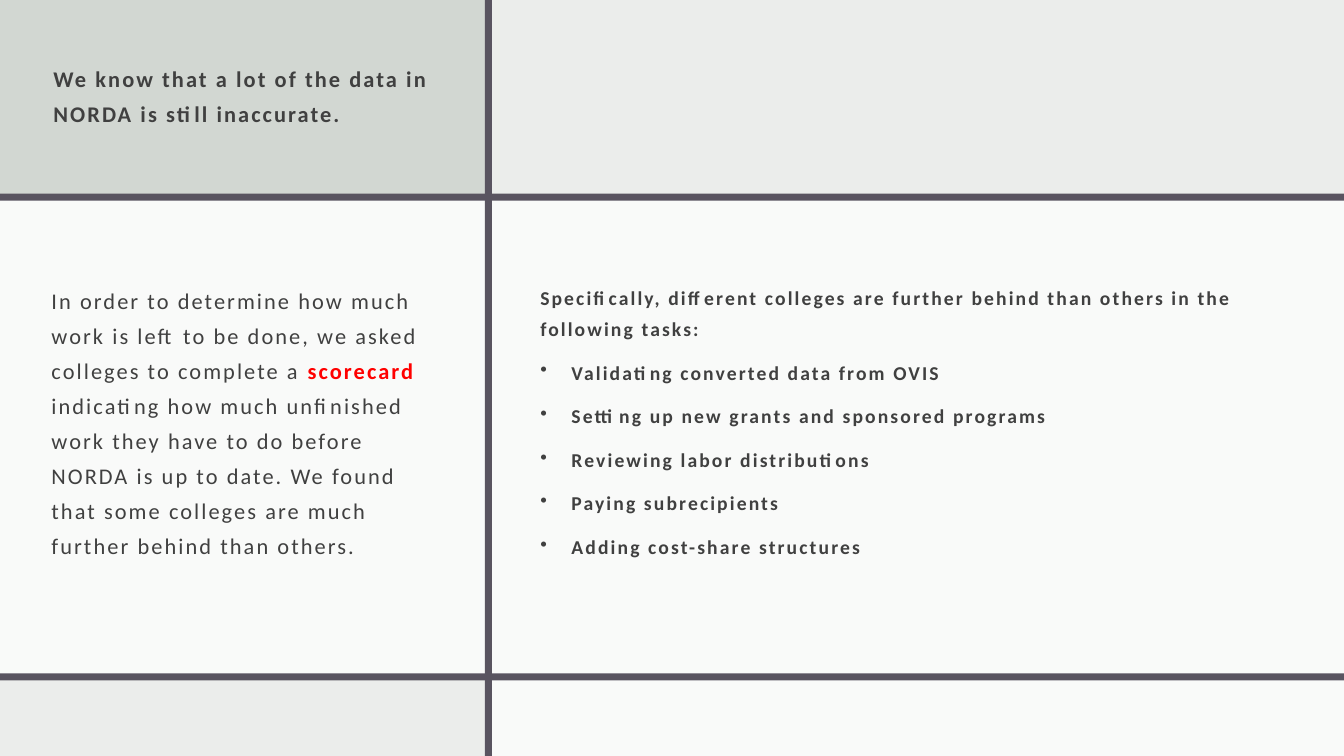
from dataclasses import dataclass

import lxml.etree
import pptx
import pptx.dml.color
import pptx.enum.shapes
import pptx.enum.text
import pptx.oxml.ns
import pptx.util


@dataclass(frozen=True)
class Theme:
    backdrop: str = "EBEDEB"
    veil: str = "FFFFFF"
    veil_opacity: int = 75
    heading_panel: str = "D2D7D2"
    rule: str = "595460"
    text: str = "404040"
    accent: str = "FF0000"
    font: str = "Calibri"
    large: float = 16
    small: float = 14
    tracking: float = 1.5
    line_spacing: float = 1.3
    space_before: float = 9.3


@dataclass(frozen=True)
class Area:
    """Left, top, width and height in percent of the slide's size."""
    left: float
    top: float
    width: float
    height: float


@dataclass(frozen=True)
class Panel:
    area: Area
    color: str
    opacity: int = 100


@dataclass(frozen=True)
class Line:
    """A paragraph; each piece pairs a text with whether it is accented."""
    pieces: tuple[tuple[str, bool], ...]
    size: float
    bold: bool = False
    bullet: bool = False


@dataclass(frozen=True)
class TextBlock:
    area: Area
    lines: tuple[Line, ...]


THEME = Theme()
SLIDE_WIDTH = pptx.util.Inches(13.33)
SLIDE_HEIGHT = pptx.util.Inches(7.5)

# Grid of the frame: one column rule and two row rules
COLUMN_RULE, TOP_RULE, BOTTOM_RULE = 36.08, 25.6, 89.07
RULE_WIDTH, RULE_HEIGHT = 0.53, 0.93

PANELS = (
    Panel(Area(0, 25.73, 100, 63.73), THEME.veil, THEME.veil_opacity),
    Panel(Area(0, 0, 36.3, 26.27), THEME.heading_panel),
    Panel(Area(0, TOP_RULE, 100, RULE_HEIGHT), THEME.rule),
    Panel(Area(COLUMN_RULE, 89.87, 100 - COLUMN_RULE, 10.13), THEME.veil, THEME.veil_opacity),
    Panel(Area(0, BOTTOM_RULE, 100, RULE_HEIGHT), THEME.rule),
    Panel(Area(COLUMN_RULE, 0, RULE_WIDTH, 100), THEME.rule),
)

TASKS = (
    "Validating converted data from OVIS",
    "Setting up new grants and sponsored programs",
    "Reviewing labor distributions",
    "Paying subrecipients",
    "Adding cost-share structures",
)
TASKS_INTRO = ("Specifically, different colleges are further behind than others "
               "in the following tasks:")
SCORECARD_STORY = (
    ("In order to determine how much work is left to be done, we asked colleges "
     "to complete a ", False),
    ("scorecard", True),
    (" indicating how much unfinished work they have to do before NORDA is up to date. "
     "We found that some colleges are much further behind than others.", False),
)
HEADING = "We know that a lot of the data in NORDA is still inaccurate."

TEXT_BLOCKS = (
    TextBlock(
        Area(39.3, 31.2, 55.43, 48.13),
        (Line(((TASKS_INTRO, False),), THEME.small, bold=True),
         *(Line(((task, False),), THEME.small, bold=True, bullet=True) for task in TASKS)),
    ),
    TextBlock(Area(2.93, 31.33, 31.13, 47.87), (Line(SCORECARD_STORY, THEME.large),)),
    TextBlock(Area(3.08, 4.4, 31.13, 15.33),
              (Line(((HEADING, False),), THEME.large, bold=True),)),
)


def rgb(color: str) -> pptx.dml.color.RGBColor:
    return pptx.dml.color.RGBColor.from_string(color)


def place(area: Area) -> tuple[int, int, int, int]:
    return (round(SLIDE_WIDTH * area.left / 100), round(SLIDE_HEIGHT * area.top / 100),
            round(SLIDE_WIDTH * area.width / 100), round(SLIDE_HEIGHT * area.height / 100))


def draw_panel(slide: pptx.slide.Slide, panel: Panel) -> None:
    block = slide.shapes.add_shape(pptx.enum.shapes.MSO_SHAPE.RECTANGLE, *place(panel.area))
    block.shadow.inherit = False
    block.line.fill.background()
    block.fill.solid()
    block.fill.fore_color.rgb = rgb(panel.color)
    if panel.opacity < 100:
        tint = block.fill._xPr.find(".//" + pptx.oxml.ns.qn("a:srgbClr"))
        alpha = lxml.etree.SubElement(tint, pptx.oxml.ns.qn("a:alpha"))
        alpha.set("val", str(panel.opacity * 1000))


def write_line(paragraph: pptx.text.text._Paragraph, line: Line) -> None:
    paragraph.line_spacing = THEME.line_spacing
    paragraph.space_before = pptx.util.Pt(THEME.space_before)
    paragraph.font.name = THEME.font
    paragraph.font.size = pptx.util.Pt(line.size)
    paragraph.font.bold = line.bold
    paragraph.font.color.rgb = rgb(THEME.text)
    properties = paragraph._p.get_or_add_pPr()
    properties.get_or_add_defRPr().set("spc", str(round(THEME.tracking * 100)))

    # Hanging bullet
    if line.bullet:
        indent = pptx.util.Inches(0.31)
        properties.set("marL", str(indent))
        properties.set("indent", str(-indent))
        bullet = lxml.etree.Element(pptx.oxml.ns.qn("a:buChar"), char="•")
        properties.get_or_add_defRPr().addprevious(bullet)

    for words, accented in line.pieces:
        run = paragraph.add_run()
        run.text = words
        if accented:
            run.font.bold = True
            run.font.color.rgb = rgb(THEME.accent)


def draw_text(slide: pptx.slide.Slide, block: TextBlock) -> None:
    frame = slide.shapes.add_textbox(*place(block.area)).text_frame
    frame.word_wrap = True
    frame.vertical_anchor = pptx.enum.text.MSO_ANCHOR.MIDDLE
    frame.margin_left = frame.margin_top = frame.margin_right = pptx.util.Inches(0.12)
    frame.margin_bottom = pptx.util.Inches(0.1)
    for index, line in enumerate(block.lines):
        write_line(frame.add_paragraph() if index else frame.paragraphs[0], line)


def main() -> None:
    presentation = pptx.Presentation()
    presentation.slide_width = SLIDE_WIDTH
    presentation.slide_height = SLIDE_HEIGHT
    slide = presentation.slides.add_slide(presentation.slide_layouts[6])
    slide.background.fill.solid()
    slide.background.fill.fore_color.rgb = rgb(THEME.backdrop)

    # Panels and rules, from back to front
    for panel in PANELS:
        draw_panel(slide, panel)

    # Text
    for block in TEXT_BLOCKS:
        draw_text(slide, block)

    presentation.save("out.pptx")


if __name__ == "__main__":
    main()
